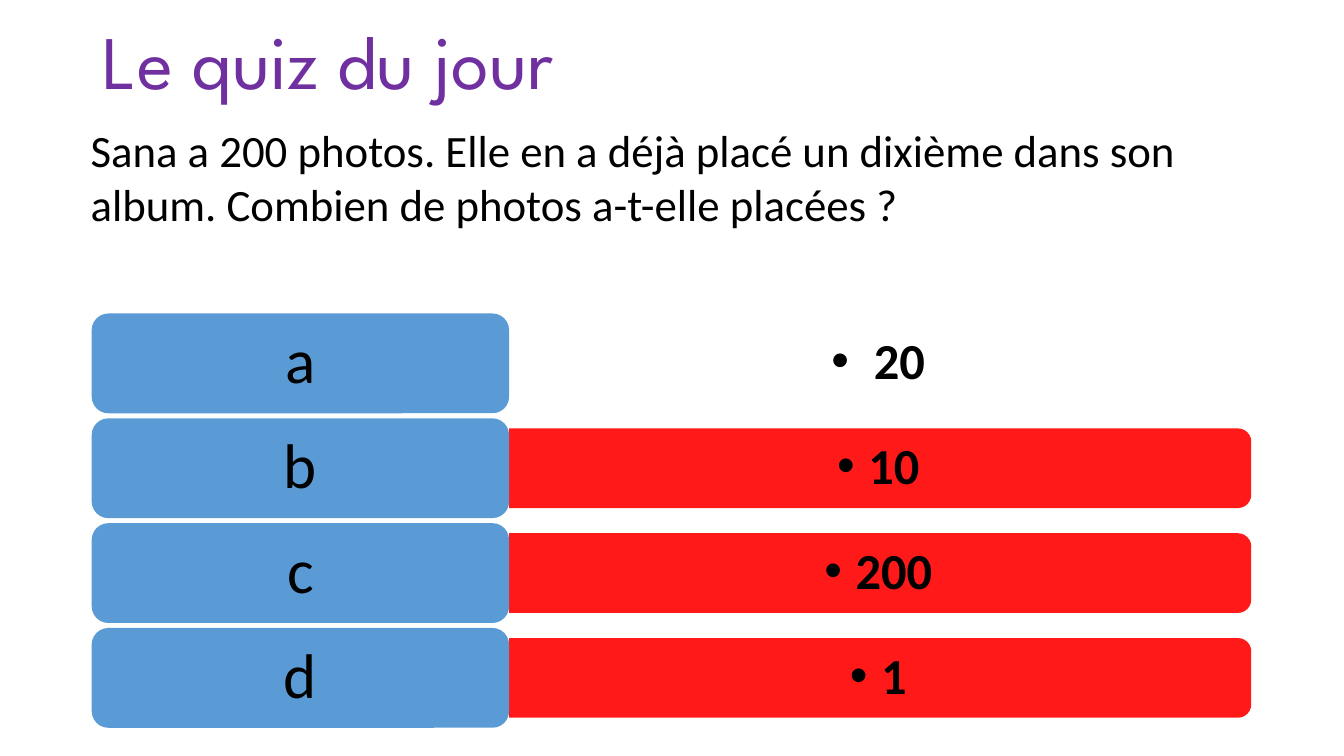
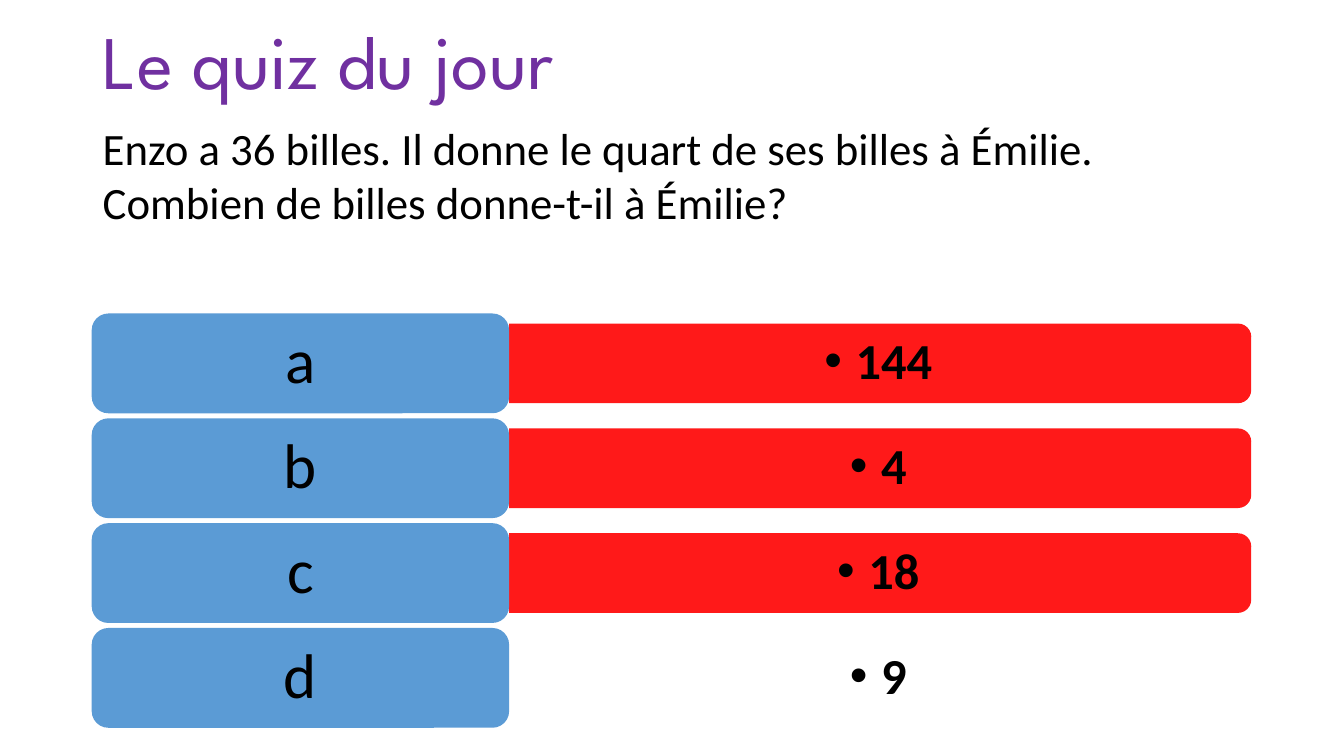
from lxml import etree
from pptx import Presentation
from pptx.dml.color import RGBColor
from pptx.enum.shapes import MSO_SHAPE as Shape
from pptx.enum.text import MSO_ANCHOR as Anchor, MSO_AUTO_SIZE as AutoSize, PP_ALIGN as Align
from pptx.oxml.ns import qn
from pptx.util import Inches, Pt

COLORS = {
    "title": "7030A0",
    "text": "000000",
    "label": "5B9BD5",
    "wrong": "FF0000",
    "right": "FFFFFF",
}
BODY_FONT = "Calibri"
TITLE_FONT = "League Spartan"

LABEL_LEFT, LABEL_WIDTH, LABEL_HEIGHT = 0.91, 4.14, 0.99
FIRST_ROW_TOP, ROW_GAP = 3.11, 0.05
BAR_LEFT, BAR_LENGTH, BAR_THICKNESS = LABEL_LEFT + LABEL_WIDTH, 7.36, 0.79
ANSWER_WIDTH, ANSWER_HEIGHT = 7.32, 0.71
BULLET_INDENT = 0.31

QUIZZES = [
    {
        "question": ["Sana a 200 photos. Elle en a déjà placé un dixième dans son "
                     "album. Combien de photos a-t-elle placées ?"],
        "place": (0.8, 1.17, 11.5, 1.18),
        "answers": [" 20", "10", "200", "1"],
        "right": 0,
    },
    {
        "question": ["Enzo a 36 billes. Il donne le quart de ses billes à Émilie.",
                     "Combien de billes donne-t-il à Émilie?"],
        "place": (0.92, 1.15, 10.86, 1.18),
        "answers": ["144", "4", "18", "9"],
        "right": 3,
    },
]


def rgb(key):
    return RGBColor.from_string(COLORS[key])


def write(frame, lines, size, color="text", font=BODY_FONT, bold=False,
          align=Align.LEFT, anchor=Anchor.TOP, spacing=1.0):
    frame.text = "\n".join(lines)
    frame.word_wrap = True
    frame.auto_size = AutoSize.NONE
    frame.vertical_anchor = anchor
    for paragraph in frame.paragraphs:
        paragraph.alignment = align
        paragraph.line_spacing = spacing
        for run in paragraph.runs:
            run.font.size = Pt(size)
            run.font.name = font
            run.font.bold = bold
            run.font.color.rgb = rgb(color)


def add_bullet(paragraph):
    properties = paragraph._p.get_or_add_pPr()
    properties.set("marL", str(Inches(BULLET_INDENT)))
    properties.set("indent", str(-Inches(BULLET_INDENT)))
    etree.SubElement(properties, qn("a:buFont")).set("typeface", "Arial")
    etree.SubElement(properties, qn("a:buChar")).set("char", "•")


def add_filled_shape(slide, kind, left, top, width, height, color):
    shape = slide.shapes.add_shape(
        kind, Inches(left), Inches(top), Inches(width), Inches(height))
    shape.shadow.inherit = False
    shape.fill.solid()
    shape.fill.fore_color.rgb = rgb(color)
    shape.line.fill.background()
    return shape


def add_title(slide, text):
    title = slide.shapes.title
    title.left, title.top = Inches(0.92), Inches(0.19)
    title.width, title.height = Inches(11.5), Inches(1.2)
    write(title.text_frame, [text], 54, "title", TITLE_FONT, spacing=0.9)


def add_question(slide, lines, place):
    question = slide.shapes.add_textbox(*map(Inches, place))
    write(question.text_frame, lines, 32)


def add_answer_bar(slide, middle, color):
    left = BAR_LEFT + (BAR_LENGTH - BAR_THICKNESS) / 2
    bar = add_filled_shape(slide, Shape.ROUND_2_SAME_RECTANGLE, left,
                           middle - BAR_LENGTH / 2, BAR_THICKNESS, BAR_LENGTH, color)
    bar.rotation = 90
    fill_color = bar.fill._xPr.find(qn("a:solidFill"))[0]
    etree.SubElement(fill_color, qn("a:alpha")).set("val", "90000")


def add_answer_text(slide, middle, text):
    answer = slide.shapes.add_textbox(
        Inches(BAR_LEFT), Inches(middle - ANSWER_HEIGHT / 2),
        Inches(ANSWER_WIDTH), Inches(ANSWER_HEIGHT))
    frame = answer.text_frame
    frame.margin_left = frame.margin_right = Inches(0.15)
    frame.margin_top = frame.margin_bottom = Inches(0.07)
    write(frame, [text], 36, bold=True, align=Align.CENTER,
          anchor=Anchor.MIDDLE, spacing=0.9)
    add_bullet(frame.paragraphs[0])


def add_label(slide, top, letter):
    label = add_filled_shape(slide, Shape.ROUNDED_RECTANGLE, LABEL_LEFT, top,
                             LABEL_WIDTH, LABEL_HEIGHT, "label")
    write(label.text_frame, [letter], 45, align=Align.CENTER,
          anchor=Anchor.MIDDLE, spacing=0.9)


def add_answers(slide, answers, right):
    for row, (letter, answer) in enumerate(zip("abcd", answers)):
        top = FIRST_ROW_TOP + row * (LABEL_HEIGHT + ROW_GAP)
        middle = top + LABEL_HEIGHT / 2
        add_answer_bar(slide, middle, "right" if row == right else "wrong")
        add_answer_text(slide, middle, answer)
        add_label(slide, top, letter)


def main():
    deck = Presentation()
    deck.slide_width, deck.slide_height = Inches(13.33), Inches(7.5)
    title_only = deck.slide_layouts[5]
    for quiz in QUIZZES:
        slide = deck.slides.add_slide(title_only)
        add_answers(slide, quiz["answers"], quiz["right"])
        add_title(slide, "Le quiz du jour")
        add_question(slide, quiz["question"], quiz["place"])
    deck.save("out.pptx")


if __name__ == "__main__":
    main()
